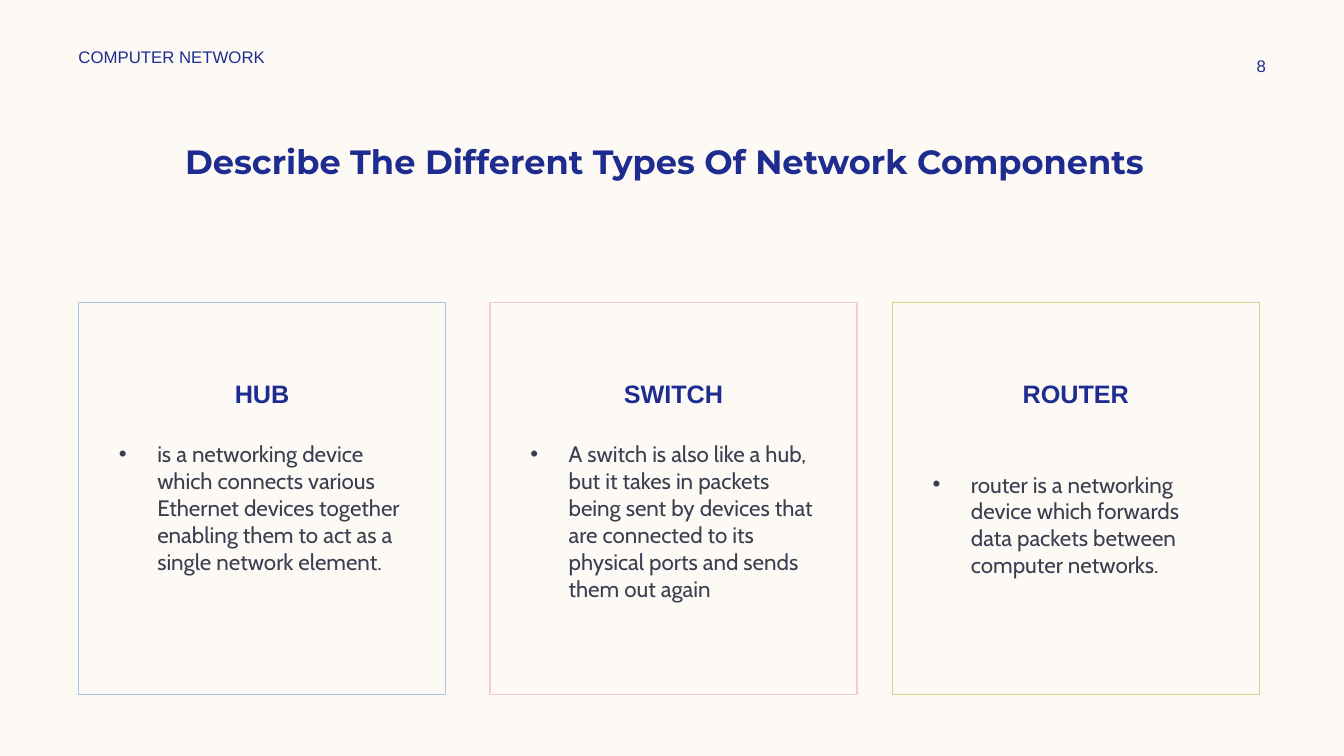
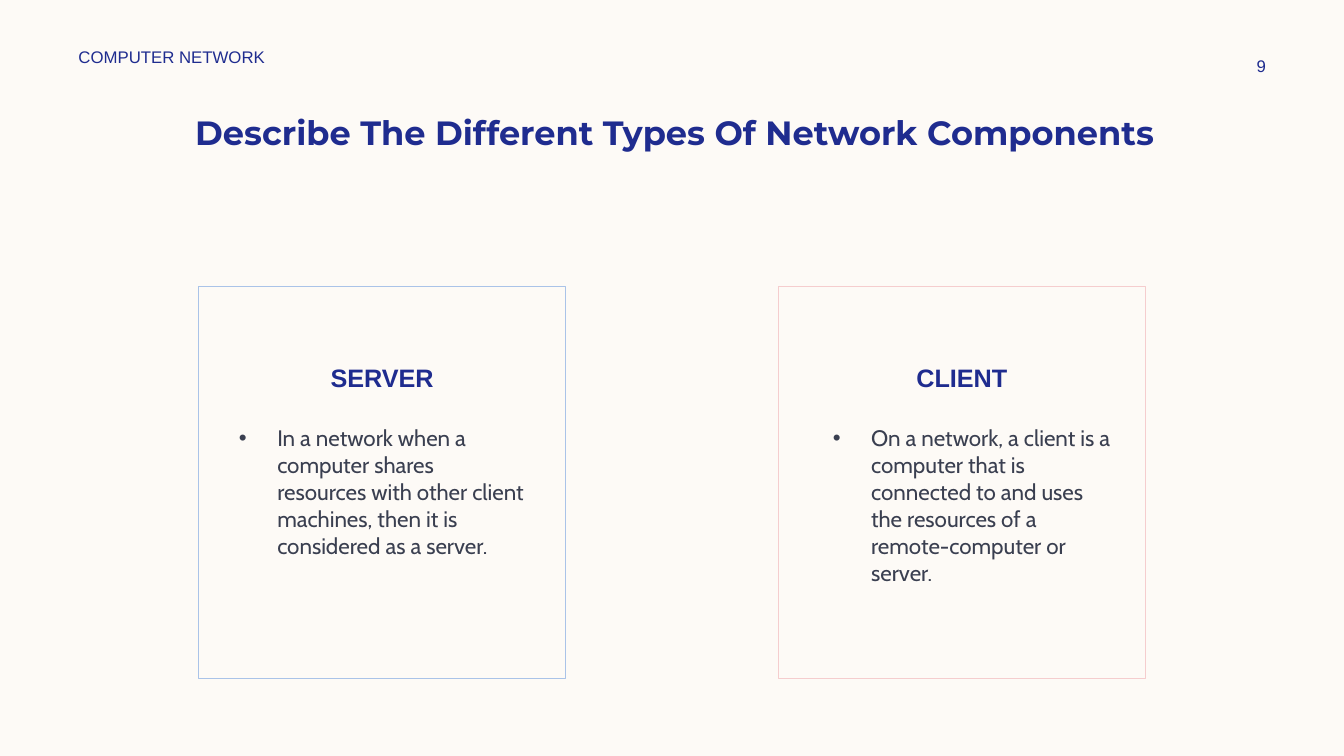
from lxml.etree import SubElement
from pptx import Presentation
from pptx.dml.color import RGBColor
from pptx.enum.shapes import MSO_SHAPE
from pptx.enum.text import MSO_ANCHOR as Anchor, MSO_AUTO_SIZE as AutoSize, PP_ALIGN as Align
from pptx.oxml.ns import qn
from pptx.util import Inches, Pt

COLORS = {
    "background": "FDFAF6",
    "navy": "1F2C8F",
    "text": "3A3F50",
    "blue": "AAC3E8",
    "pink": "F5CDCE",
    "green": "D2D592",
}
TITLE = "Describe The Different Types Of Network Components"
COMPARISON_LAYOUT = 4
CARD_WIDTH, CARD_HEIGHT = 3.64, 3.89
LIST_WIDTH, LIST_HEIGHT = 3.03, 2.41
LIST_INSET, LIST_DROP = 0.3, 1.32
HANGING = 0.38

SLIDES = [
    {
        "number": 8,
        "title_at": (0.68, 1.35),
        "cards_top": 3,
        "cards": [
            {"left": 0.78, "color": "blue", "heading": "HUB",
             "text": "is a networking device which connects various Ethernet devices "
                     "together enabling them to act as a single network element."},
            {"left": 4.86, "color": "pink", "heading": "SWITCH",
             "text": "A switch is also like a hub, but it takes in packets being sent by "
                     "devices that are connected to its physical ports and sends them out again"},
            {"left": 8.85, "color": "green", "heading": "ROUTER", "shift": (0, 0.3),
             "text": "router is a networking device which forwards data packets "
                     "between computer networks."},
        ],
    },
    {
        "number": 9,
        "title_at": (0.78, 1.06),
        "cards_top": 2.84,
        "cards": [
            {"left": 1.97, "color": "blue", "heading": "SERVER",
             "text": "In a network when a computer shares resources with other client "
                     "machines, then it is considered as a server."},
            {"left": 7.72, "color": "pink", "heading": "CLIENT", "shift": (0.14, 0),
             "text": "On a network, a client is a computer that is connected to and uses "
                     "the resources of a remote-computer or server."},
        ],
    },
]


def color(name):
    return RGBColor.from_string(COLORS[name])


def place(shape, left, top, width, height):
    shape.left, shape.top = Inches(left), Inches(top)
    shape.width, shape.height = Inches(width), Inches(height)


def write(shape, text, font_name, size, color_name="navy", bold=False,
          align=Align.LEFT, anchor=Anchor.TOP):
    frame = shape.text_frame
    frame.word_wrap = True
    frame.auto_size = AutoSize.NONE
    frame.vertical_anchor = anchor
    frame.text = text
    paragraph = frame.paragraphs[0]
    paragraph.alignment = align
    font = paragraph.font
    font.name, font.size, font.bold = font_name, Pt(size), bold
    font.color.rgb = color(color_name)
    return paragraph


def add_bullet(paragraph):
    paragraph.space_before = Pt(3.6)
    properties = paragraph._p.get_or_add_pPr()
    properties.set("marL", str(Inches(HANGING)))
    properties.set("indent", str(-Inches(HANGING)))
    bullet_font = SubElement(properties, qn("a:buFont"), typeface="Arial")
    bullet = SubElement(properties, qn("a:buChar"), char="•")
    default_font = properties.find(qn("a:defRPr"))
    default_font.addprevious(bullet_font)
    default_font.addprevious(bullet)


def add_header(slide, number):
    for text, box, align in (
        ("COMPUTER NETWORK", (0.68, 0.41, 3.5, 0.3), Align.LEFT),
        (str(number), (11.97, 0.5, 1.08, 0.3), Align.CENTER),
    ):
        label = slide.shapes.add_textbox(*map(Inches, box))
        write(label, text, "Arial", 12, align=align, anchor=Anchor.MIDDLE)


def add_card(slide, body, card, top):
    left = card["left"]
    frame = slide.shapes.add_shape(
        MSO_SHAPE.RECTANGLE, *map(Inches, (left, top, CARD_WIDTH, CARD_HEIGHT)))
    frame.shadow.inherit = False
    frame.fill.background()
    frame.line.color.rgb = color(card["color"])
    frame.line.width = Pt(1)
    frame.text_frame.margin_top = Inches(0.75)
    write(frame, card["heading"], "Arial", 18, bold=True, align=Align.CENTER)

    shift_right, shift_down = card.get("shift", (0, 0))
    place(body, left + LIST_INSET + shift_right, top + LIST_DROP + shift_down,
          LIST_WIDTH, LIST_HEIGHT - shift_down)
    add_bullet(write(body, card["text"], "Cabin", 16, "text"))


def add_component_slide(presentation, content):
    slide = presentation.slides.add_slide(presentation.slide_layouts[COMPARISON_LAYOUT])
    title = slide.shapes.title
    place(title, *content["title_at"], 11.82, 0.84)
    write(title, TITLE, "Montserrat", 24, bold=True, align=Align.CENTER)
    add_header(slide, content["number"])

    bodies = [shape for shape in slide.placeholders if shape.placeholder_format.idx > 0]
    cards = content["cards"]
    for body, card in zip(bodies, cards):
        add_card(slide, body, card, content["cards_top"])
    for unused in bodies[len(cards):]:
        unused.element.getparent().remove(unused.element)


def main():
    presentation = Presentation()
    presentation.slide_width, presentation.slide_height = Inches(13.33), Inches(7.5)
    background = presentation.slide_master.background.fill
    background.solid()
    background.fore_color.rgb = color("background")
    for content in SLIDES:
        add_component_slide(presentation, content)
    presentation.save("out.pptx")


if __name__ == "__main__":
    main()
